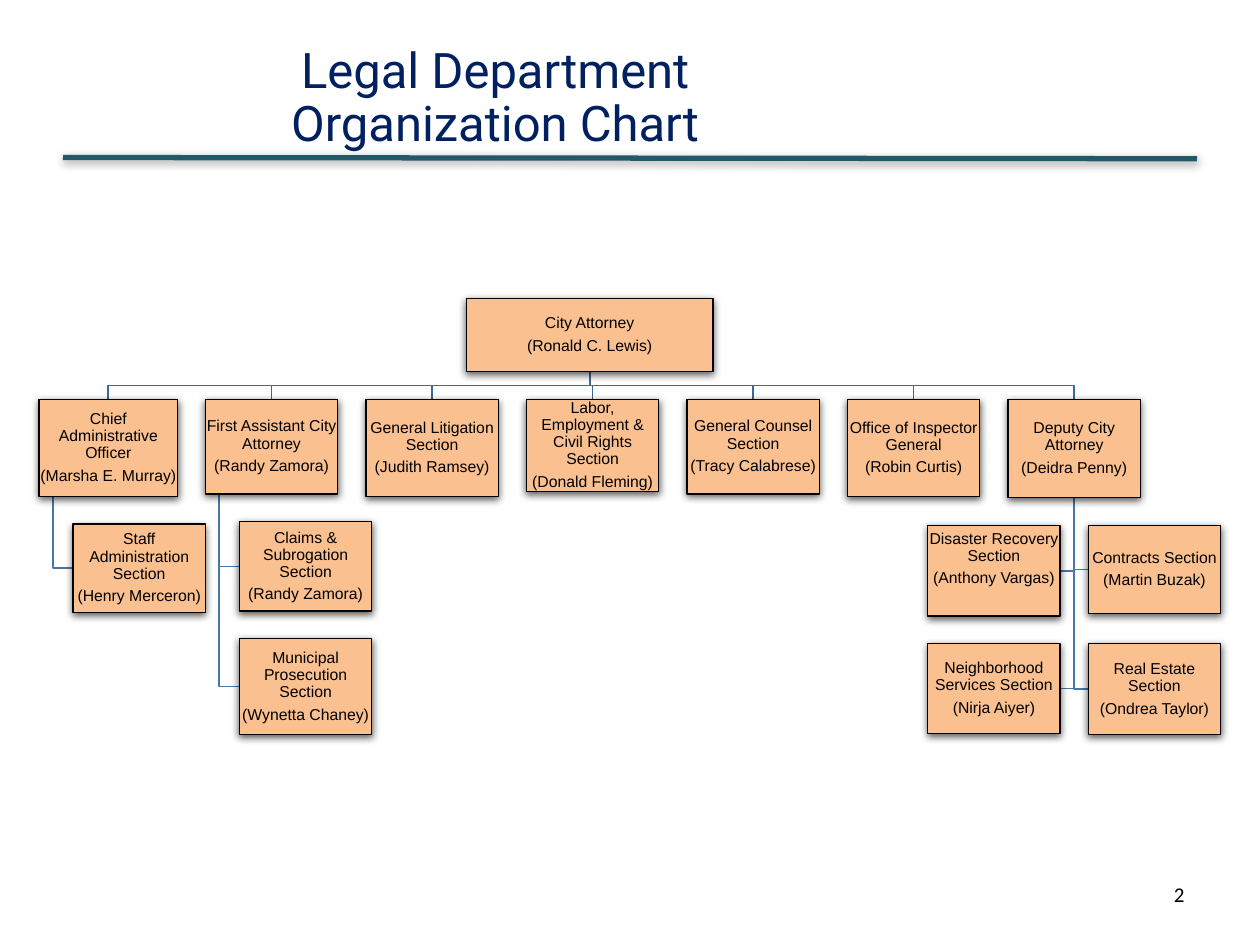
from lxml.etree import SubElement
from pptx import Presentation
from pptx.dml.color import RGBColor
from pptx.enum.shapes import MSO_CONNECTOR, MSO_SHAPE
from pptx.enum.text import MSO_ANCHOR, PP_ALIGN
from pptx.oxml.ns import qn
from pptx.util import Inches, Pt

PITCH = 1.274
BOX_WIDTH = 1.05
CHIEF_LEFT, CHIEF_WIDTH = 0.31, 1.1
FIRST_LEFT = 1.63
ROOT_LEFT, ROOT_TOP, ROOT_WIDTH, ROOT_HEIGHT = 3.7, 2.37, 1.96, 0.58
ROW_GAP = 0.22
BRANCH_TOP = ROOT_TOP + ROOT_HEIGHT + ROW_GAP
CHILD_INDENT, STEM_INDENT = 0.27, 0.11
BOX_INSET = 0.01
RAISED_INSET = 0.2
BUS_COLOUR, STEM_COLOUR = "3F6797", "4875AC"

BRANCHES = [
    ("Chief Administrative Officer", "(Marsha E. Murray)", 0.77,
     [[("Staff Administration Section", "(Henry Merceron)", 0.7)]]),
    ("First Assistant City Attorney", "(Randy Zamora)", 0.75,
     [[("Claims & Subrogation Section", "(Randy Zamora)", 0.71)],
      [("Municipal Prosecution Section", "(Wynetta Chaney)", 0.76)]]),
    ("General Litigation Section", "(Judith Ramsey)", 0.77, []),
    ("Labor, Employment & Civil Rights Section", "(Donald Fleming)", 0.73, []),
    ("General Counsel Section", "(Tracy Calabrese)", 0.75, []),
    ("Office of Inspector General", "(Robin Curtis)", 0.77, []),
    ("Deputy City Attorney", "(Deidra Penny)", 0.78,
     [[("Disaster Recovery Section", "(Anthony Vargas)", 0.72, RAISED_INSET),
       ("Contracts Section", "(Martin Buzak)", 0.7)],
      [("Neighborhood Services Section", "(Nirja Aiyer)", 0.71),
       ("Real Estate Section", "(Ondrea Taylor)", 0.72)]]),
]


def colour(hex_code):
    """Turn a hex string into a colour."""
    return RGBColor.from_string(hex_code)


def add_shadow(item, opacity, blur, distance):
    """Give an outlined item a black shadow that falls straight down."""
    effects = SubElement(item.element.spPr, qn("a:effectLst"))
    shadow = SubElement(effects, qn("a:outerShdw"), blurRad=str(Pt(blur)),
                        dist=str(Pt(distance)), dir="5400000", rotWithShape="0")
    black = SubElement(shadow, qn("a:srgbClr"), val="000000")
    SubElement(black, qn("a:alpha"), val=str(opacity * 1000))


def add_run(paragraph, text, size, font, hex_code):
    """Append one styled run to a paragraph."""
    run = paragraph.add_run()
    run.text = text
    run.font.size, run.font.name = Pt(size), font
    run.font.color.rgb = colour(hex_code)


def set_insets(frame, inset, bottom):
    """Set the inner margins of a text frame and let it wrap."""
    frame.word_wrap = True
    frame.vertical_anchor = MSO_ANCHOR.MIDDLE
    frame.margin_left = frame.margin_right = frame.margin_top = Inches(inset)
    frame.margin_bottom = Inches(bottom)


def add_box(slide, left, top, width, height, role, person, bottom=BOX_INSET):
    """Draw one office box with its role and the person who holds it."""
    box = slide.shapes.add_shape(MSO_SHAPE.RECTANGLE, Inches(left), Inches(top),
                                 Inches(width), Inches(height))
    box.fill.solid()
    box.fill.fore_color.rgb = colour("FAC090")
    box.line.color.rgb = colour("000000")
    box.line.width = Pt(0.75)
    add_shadow(box, 63, 4.5, 1.5)
    frame = box.text_frame
    set_insets(frame, BOX_INSET, bottom)
    for paragraph, text in ((frame.paragraphs[0], role), (frame.add_paragraph(), person)):
        paragraph.alignment = PP_ALIGN.CENTER
        paragraph.line_spacing = 0.9
        paragraph.space_after = Pt(3.15)
        add_run(paragraph, text, 9, "Arial", "000000")


def add_elbow(slide, points, hex_code):
    """Draw an open bent line through the points."""
    start, *rest = [(Inches(x), Inches(y)) for x, y in points]
    builder = slide.shapes.build_freeform(*start)
    builder.add_line_segments(rest, close=False)
    elbow = builder.convert_to_shape()
    elbow.fill.background()
    elbow.line.color.rgb = colour(hex_code)
    elbow.line.width = Pt(1)
    elbow.shadow.inherit = False


def add_sections(slide, left, top, rows):
    """Hang rows of sections below a branch: one to the right, or a pair astride."""
    child_top = top + ROW_GAP
    for row in rows:
        paired = len(row) == 2
        stem = left + (BOX_WIDTH / 2 if paired else STEM_INDENT)
        offsets = (-PITCH / 2, PITCH / 2) if paired else (CHILD_INDENT,)
        for offset, (role, person, height, *bottom) in zip(offsets, row):
            child_left = left + offset
            side = child_left + (BOX_WIDTH if offset < 0 else 0)
            middle = child_top + height / 2
            add_elbow(slide, [(stem, top), (stem, middle), (side, middle)], STEM_COLOUR)
            add_box(slide, child_left, child_top, BOX_WIDTH, height, role, person, *bottom)
        child_top += max(section[2] for section in row) + ROW_GAP


def add_branch(slide, column, role, person, height, rows):
    """Draw one branch with its line from the top office and its sections."""
    left = FIRST_LEFT + (column - 1) * PITCH if column else CHIEF_LEFT
    width = BOX_WIDTH if column else CHIEF_WIDTH
    root_centre, centre = ROOT_LEFT + ROOT_WIDTH / 2, left + width / 2
    root_bottom = ROOT_TOP + ROOT_HEIGHT
    bus = root_bottom + ROW_GAP / 2
    add_elbow(slide, [(root_centre, root_bottom), (root_centre, bus),
                      (centre, bus), (centre, BRANCH_TOP)], BUS_COLOUR)
    add_sections(slide, left, BRANCH_TOP + height, rows)
    add_box(slide, left, BRANCH_TOP, width, height, role, person)


def add_header(slide):
    """Draw the two-line title and the rule below it."""
    rule = slide.shapes.add_connector(MSO_CONNECTOR.STRAIGHT, Inches(0.5), Inches(1.25),
                                      Inches(9.5), Inches(1.26))
    rule.line.color.rgb = colour("215968")
    rule.line.width = Pt(3)
    add_shadow(rule, 38, 5, 1.6)
    title = slide.shapes.add_textbox(Inches(0.5), Inches(0.33), Inches(6.86), Inches(0.92))
    set_insets(title.text_frame, 0, 0)
    paragraph = title.text_frame.paragraphs[0]
    paragraph.alignment = PP_ALIGN.CENTER
    paragraph.line_spacing = 0.9
    add_run(paragraph, "Legal Department", 28, "Roboto", "002060")
    paragraph.add_line_break()
    add_run(paragraph, "Organization Chart", 28, "Roboto", "002060")


def add_page_number(slide):
    """Write the page number at the lower right."""
    number = slide.shapes.add_textbox(Inches(7.17), Inches(6.95), Inches(2.33), Inches(0.4))
    number.text_frame.word_wrap = True
    paragraph = number.text_frame.paragraphs[0]
    paragraph.alignment = PP_ALIGN.RIGHT
    add_run(paragraph, "2", 12, "Calibri", "000000")


def main():
    """Build the organization chart and save it."""
    deck = Presentation()
    deck.slide_width, deck.slide_height = Inches(10), Inches(7.5)
    slide = deck.slides.add_slide(deck.slide_layouts[6])
    add_header(slide)
    add_page_number(slide)
    for column, branch in enumerate(BRANCHES):
        add_branch(slide, column, *branch)
    add_box(slide, ROOT_LEFT, ROOT_TOP, ROOT_WIDTH, ROOT_HEIGHT,
            "City Attorney", "(Ronald C. Lewis)")
    deck.save("out.pptx")


if __name__ == "__main__":
    main()
